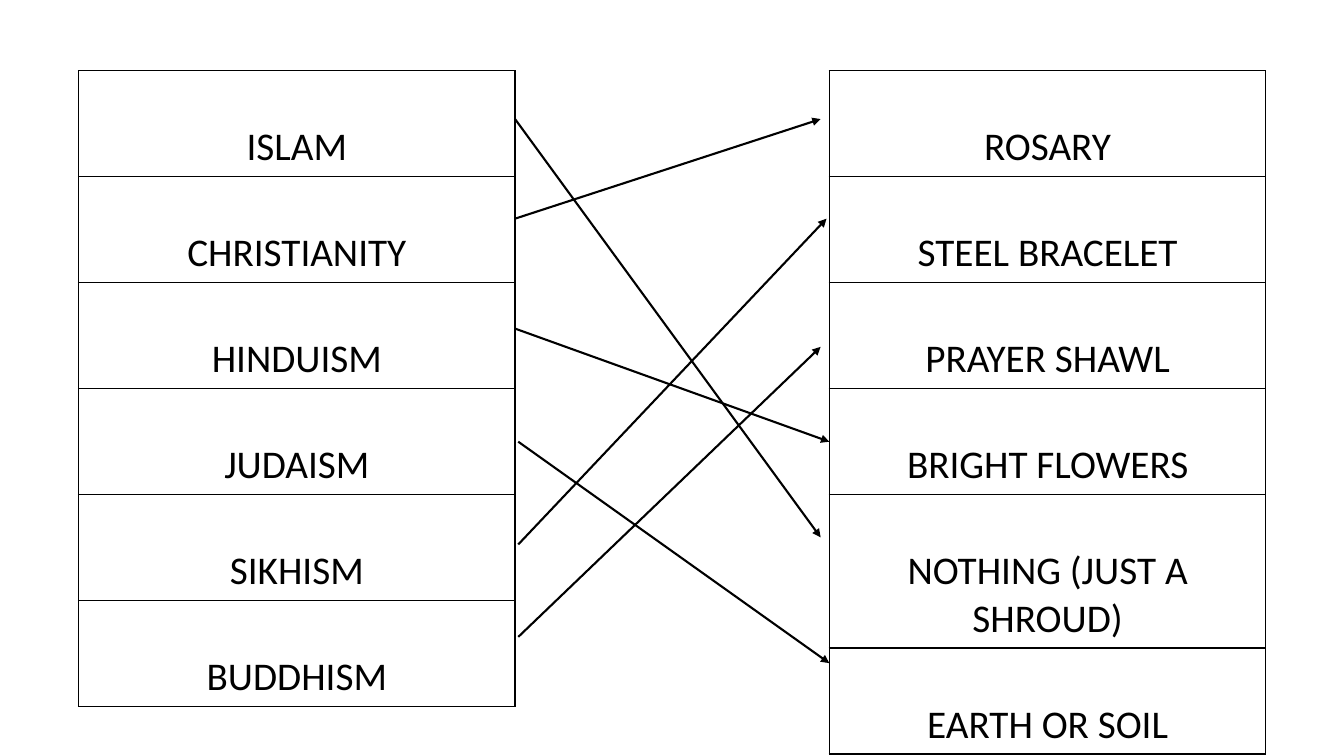
"""Build a slide matching religions to the objects used at their funerals."""
from lxml.etree import SubElement
from pptx import Presentation
from pptx.dml.color import RGBColor
from pptx.enum.shapes import MSO_CONNECTOR
from pptx.enum.text import MSO_ANCHOR, PP_ALIGN
from pptx.oxml import parse_xml
from pptx.oxml.ns import nsdecls, qn
from pptx.util import Cm, Pt

BLACK = RGBColor(0, 0, 0)
WHITE = RGBColor(255, 255, 255)

RELIGIONS = ["ISLAM", "CHRISTIANITY", "HINDUISM", "JUDAISM", "SIKHISM", "BUDDHISM"]
OBJECTS = ["ROSARY", "STEEL BRACELET", "PRAYER SHAWL", "BRIGHT FLOWERS",
           "NOTHING (JUST A SHROUD)", "EARTH OR SOIL"]
MATCHES = [
    ((12.98, 3.0), (20.68, 13.54)),
    ((12.98, 5.51), (20.68, 3.0)),
    ((12.98, 8.28), (20.9, 11.13)),
    ((13.06, 11.13), (20.9, 16.71)),
    ((13.06, 13.72), (20.83, 5.51)),
    ((13.06, 16.05), (20.68, 8.74)),
]

TOP = 1.78
COLUMN_WIDTH = 11
ROW_HEIGHT = 2.67
EXTRA_LINE = 1.2
ONE_LINE_LETTERS = 18


def add_borders(cell):
    properties = cell._tc.get_or_add_tcPr()
    for place, side in enumerate(("lnL", "lnR", "lnT", "lnB")):
        properties.insert(place, parse_xml(
            f'<a:{side} {nsdecls("a")} w="{Pt(1)}"><a:solidFill>'
            f'<a:srgbClr val="{BLACK}"/></a:solidFill></a:{side}>'))


def add_column(slide, left, entries):
    heights = [ROW_HEIGHT + EXTRA_LINE * (len(entry) > ONE_LINE_LETTERS)
               for entry in entries]
    table = slide.shapes.add_table(len(entries), 1, Cm(left), Cm(TOP),
                                   Cm(COLUMN_WIDTH), Cm(sum(heights))).table
    table.first_row = table.horz_banding = False
    for row, entry, height in zip(table.rows, entries, heights):
        row.height = Cm(height)
        cell = row.cells[0]
        cell.fill.solid()
        cell.fill.fore_color.rgb = WHITE
        cell.vertical_anchor = MSO_ANCHOR.BOTTOM
        add_borders(cell)
        paragraph = cell.text_frame.paragraphs[0]
        paragraph.alignment = PP_ALIGN.CENTER
        run = paragraph.add_run()
        run.text = entry
        run.font.name = "Calibri"
        run.font.size = Pt(28)
        run.font.color.rgb = BLACK


def add_arrow(slide, start, end):
    arrow = slide.shapes.add_connector(
        MSO_CONNECTOR.STRAIGHT, *(Cm(length) for length in start + end))
    arrow.line.color.rgb = BLACK
    arrow.line.width = Pt(1.5)
    SubElement(arrow.line._get_or_add_ln(), qn("a:tailEnd"), type="triangle")
    SubElement(arrow._element.spPr, qn("a:effectLst"))


def main():
    deck = Presentation()
    deck.slide_width, deck.slide_height = Cm(33.87), Cm(19.05)
    slide = deck.slides.add_slide(deck.slide_layouts[6])
    add_column(slide, 1.98, RELIGIONS)
    add_column(slide, 20.9, OBJECTS)
    for start, end in MATCHES:
        add_arrow(slide, start, end)
    deck.save("out.pptx")


if __name__ == "__main__":
    main()
